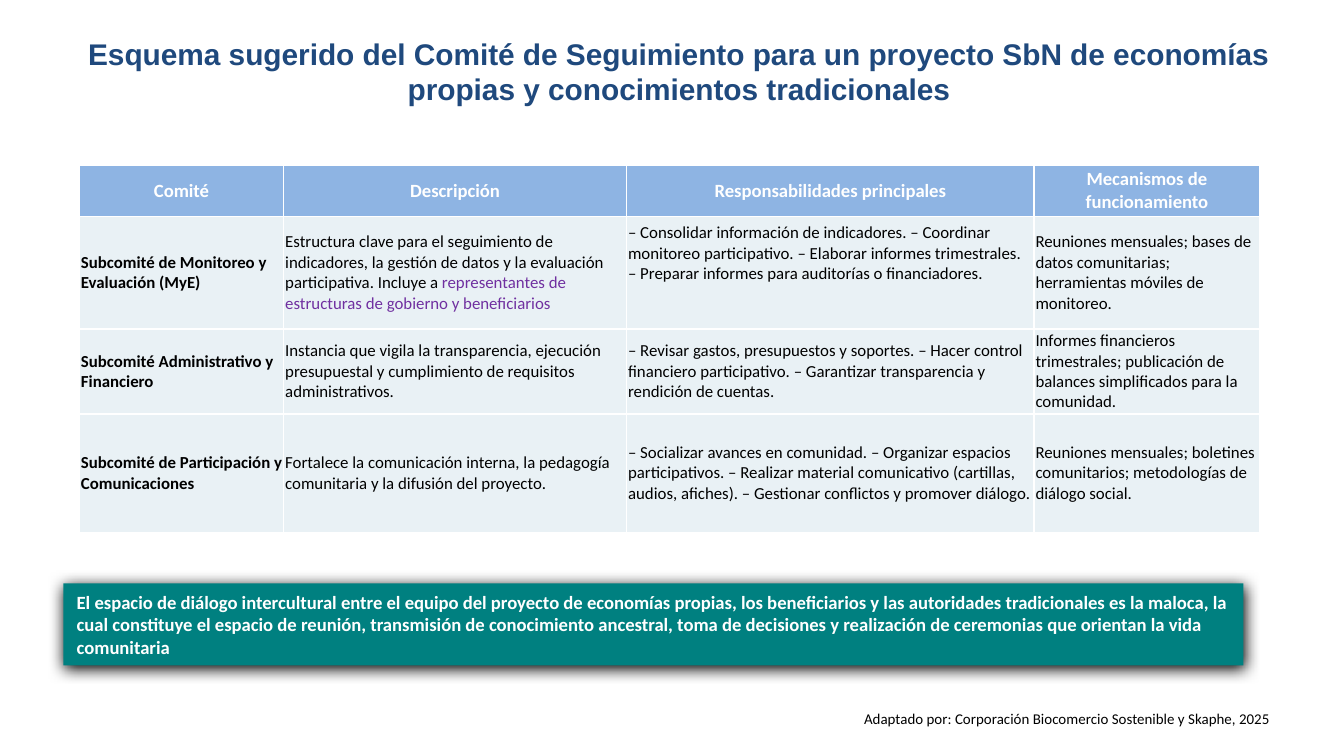
from lxml.etree import SubElement
from pptx import Presentation
from pptx.dml.color import RGBColor
from pptx.enum.shapes import MSO_SHAPE
from pptx.enum.text import MSO_ANCHOR, MSO_AUTO_SIZE, PP_ALIGN
from pptx.oxml.ns import qn
from pptx.util import Cm, Pt

WHITE, BLACK, NAVY, PURPLE = "FFFFFF", "000000", "1F497D", "7030A0"
HEADER_FILL, BODY_FILL, TEAL = "8EB4E3", "E9F1F5", "008080"
COLUMN_WIDTHS = [3.86, 6.48, 7.7, 4.27]
ROW_HEIGHTS = [0.97, 2.13, 1.42, 2.24]
TITLE = ("Esquema sugerido del Comité de Seguimiento para un proyecto SbN de economías "
         "propias y conocimientos tradicionales")
MESSAGE = ("El espacio de diálogo intercultural entre el equipo del proyecto de economías propias, "
           "los beneficiarios y las autoridades tradicionales es la maloca, la cual constituye el "
           "espacio de reunión, transmisión de conocimiento ancestral, toma de decisiones y "
           "realización de ceremonias que orientan la vida comunitaria")
CREDIT = "Adaptado por: Corporación Biocomercio Sostenible y Skaphe, 2025"
HIGHLIGHT = "representantes de estructuras de gobierno y beneficiarios"
COMMITTEES = [
    ["Comité", "Descripción", "Responsabilidades principales", "Mecanismos de funcionamiento"],
    ["Subcomité de Monitoreo y Evaluación (MyE)",
     "Estructura clave para el seguimiento de indicadores, la gestión de datos y la evaluación "
     "participativa. Incluye a ",
     "– Consolidar información de indicadores. – Coordinar monitoreo participativo. – Elaborar "
     "informes trimestrales. – Preparar informes para auditorías o financiadores.",
     "Reuniones mensuales; bases de datos comunitarias; herramientas móviles de monitoreo."],
    ["Subcomité Administrativo y Financiero",
     "Instancia que vigila la transparencia, ejecución presupuestal y cumplimiento de requisitos "
     "administrativos.",
     "– Revisar gastos, presupuestos y soportes. – Hacer control financiero participativo. "
     "– Garantizar transparencia y rendición de cuentas.",
     "Informes financieros trimestrales; publicación de balances simplificados para la comunidad."],
    ["Subcomité de Participación y Comunicaciones",
     "Fortalece la comunicación interna, la pedagogía comunitaria y la difusión del proyecto.",
     "– Socializar avances en comunidad. – Organizar espacios participativos. – Realizar material "
     "comunicativo (cartillas, audios, afiches). – Gestionar conflictos y promover diálogo.",
     "Reuniones mensuales; boletines comunitarios; metodologías de diálogo social."],
]


def color(value):
    """Return the colour for a hex string."""
    return RGBColor.from_string(value)


def write(frame, text, size, fill, bold=False, align=PP_ALIGN.LEFT, font="Calibri"):
    """Write one formatted paragraph into a text frame and return it."""
    frame.word_wrap = True
    paragraph = frame.paragraphs[0]
    paragraph.text = text
    paragraph.alignment = align
    paragraph.font.name = font
    paragraph.font.size = Pt(size)
    paragraph.font.bold = bold
    paragraph.font.color.rgb = color(fill)
    return paragraph


def add_title(slide):
    """Place and format the slide title."""
    title = slide.shapes.title
    title.left, title.top, title.width, title.height = Cm(1.52), Cm(0.66), Cm(22.63), Cm(1.37)
    frame = title.text_frame
    frame.auto_size = MSO_AUTO_SIZE.NONE
    frame.vertical_anchor = MSO_ANCHOR.MIDDLE
    frame.margin_left = frame.margin_right = frame.margin_top = frame.margin_bottom = 0
    write(frame, TITLE, 16, NAVY, True, PP_ALIGN.CENTER, "Arial")


def add_borders(cell):
    """Draw thin white lines on the four sides of a cell."""
    properties = cell._tc.get_or_add_tcPr()
    for position, side in enumerate(("a:lnL", "a:lnR", "a:lnT", "a:lnB")):
        line = SubElement(properties, qn(side), w=str(Pt(1)))
        fill = SubElement(line, qn("a:solidFill"))
        SubElement(fill, qn("a:srgbClr"), val=WHITE)
        properties.insert(position, line)


def format_cell(cell, text, is_header, is_name):
    """Fill, frame and write one table cell."""
    cell.vertical_anchor = MSO_ANCHOR.MIDDLE
    cell.margin_left = cell.margin_right = cell.margin_top = cell.margin_bottom = Cm(0.03)
    cell.fill.solid()
    cell.fill.fore_color.rgb = color(HEADER_FILL if is_header else BODY_FILL)
    add_borders(cell)
    if is_header:
        write(cell.text_frame, text, 10, WHITE, True, PP_ALIGN.CENTER)
    else:
        write(cell.text_frame, text, 9, BLACK, is_name)


def add_committee_table(slide):
    """Build the table of subcommittees."""
    table = slide.shapes.add_table(len(ROW_HEIGHTS), len(COLUMN_WIDTHS), Cm(1.5), Cm(3.12),
                                   Cm(sum(COLUMN_WIDTHS)), Cm(sum(ROW_HEIGHTS))).table
    for column, width in zip(table.columns, COLUMN_WIDTHS):
        column.width = Cm(width)
    for row, height in zip(table.rows, ROW_HEIGHTS):
        row.height = Cm(height)
    for row_index, texts in enumerate(COMMITTEES):
        for column_index, text in enumerate(texts):
            format_cell(table.cell(row_index, column_index), text,
                        row_index == 0, column_index == 0)
    highlight = table.cell(1, 1).text_frame.paragraphs[0].add_run()
    highlight.text = HIGHLIGHT
    highlight.font.color.rgb = color(PURPLE)
    table.cell(1, 2).margin_bottom = Cm(0.76)


def add_shadow(shape):
    """Give a shape a soft black shadow below it."""
    shape.shadow.inherit = False
    effects = shape._element.spPr.find(qn("a:effectLst"))
    shadow = SubElement(effects, qn("a:outerShdw"), blurRad=str(Pt(8.5)), dist=str(Pt(1)),
                        dir="5400000", algn="t", rotWithShape="0")
    SubElement(shadow, qn("a:srgbClr"), val=BLACK)


def add_banner(slide):
    """Add the teal key message."""
    banner = slide.shapes.add_shape(MSO_SHAPE.RECTANGLE, Cm(1.2), Cm(11.03), Cm(22.3), Cm(1.55))
    banner.fill.solid()
    banner.fill.fore_color.rgb = color(TEAL)
    banner.line.fill.background()
    add_shadow(banner)
    write(banner.text_frame, MESSAGE, 10, WHITE, True)


def add_credit(slide):
    """Add the credit line."""
    credit = slide.shapes.add_textbox(Cm(16.08), Cm(13.28), Cm(8.69), Cm(0.6))
    write(credit.text_frame, CREDIT, 8, BLACK)


def main():
    """Build and save the slide."""
    presentation = Presentation()
    presentation.slide_width, presentation.slide_height = Cm(25.4), Cm(14.29)
    slide = presentation.slides.add_slide(presentation.slide_layouts[5])
    add_title(slide)
    add_committee_table(slide)
    add_credit(slide)
    add_banner(slide)
    presentation.save("out.pptx")


if __name__ == "__main__":
    main()
